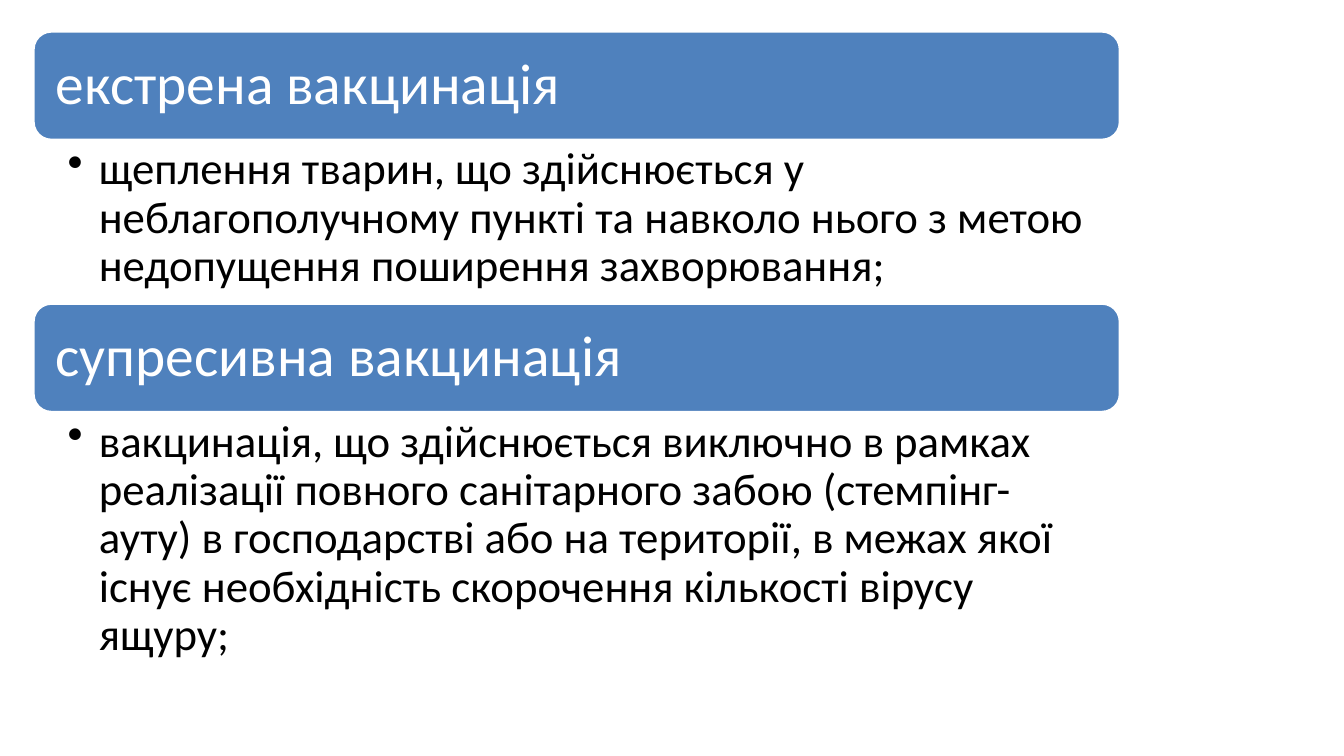
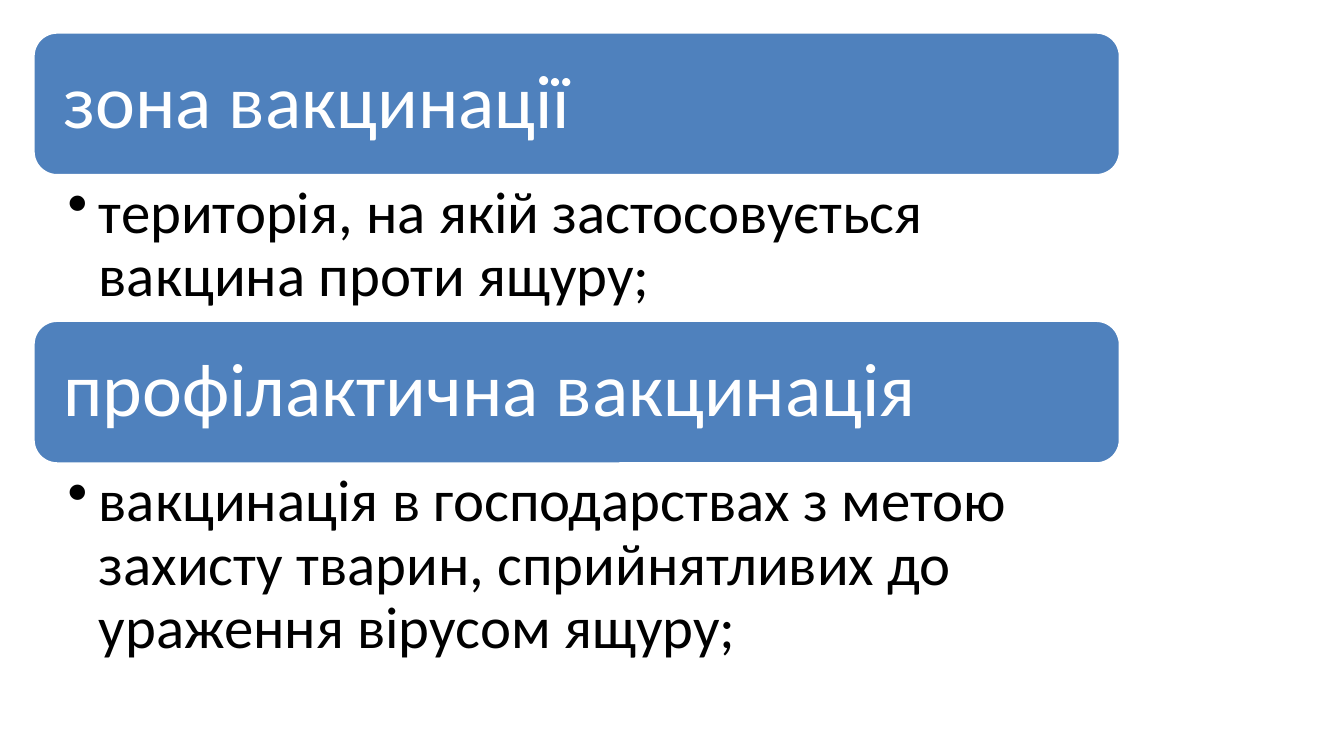
from dataclasses import dataclass

from lxml import etree
from pptx import Presentation
from pptx.dml.color import RGBColor
from pptx.enum.shapes import MSO_SHAPE
from pptx.enum.text import MSO_ANCHOR, PP_ALIGN
from pptx.oxml.ns import qn
from pptx.util import Inches, Pt

ROUNDED = MSO_SHAPE.ROUNDED_RECTANGLE
TOP, MIDDLE = MSO_ANCHOR.TOP, MSO_ANCHOR.MIDDLE
LEFT = PP_ALIGN.LEFT


@dataclass(frozen=True)
class Theme:
    font: str = "Calibri"
    band: RGBColor = RGBColor(0x4F, 0x81, 0xBD)
    white: RGBColor = RGBColor(0xFF, 0xFF, 0xFF)
    black: RGBColor = RGBColor(0, 0, 0)
    outline: float = 2
    line_spacing: float = 0.9
    bullet_indent: float = 0.31


@dataclass(frozen=True)
class Scale:
    term_size: int
    definition_size: int
    band_height: float
    band_inset: float
    definition_insets: tuple


THEME = Theme()
LIST_LEFT, LIST_WIDTH = 0.33, 10.78
COMPACT = Scale(41, 32, 1.08, 0.17, (0.34, 0.06, 0.32, 0.06))
LARGE = Scale(54, 42, 1.42, 0.23, (0.34, 0.07, 0.42, 0.07))

SLIDES = [
    (COMPACT, 0.31, [
        ("екстрена вакцинація",
         "щеплення тварин, що здійснюється у неблагополучному пункті та навколо "
         "нього з метою недопущення поширення захворювання;", 1.62),
        ("супресивна вакцинація",
         "вакцинація, що здійснюється виключно в рамках реалізації повного "
         "санітарного забою (стемпінг-ауту) в господарстві або на території, "
         "в межах якої існує необхідність скорочення кількості вірусу ящуру;", 2.6),
    ]),
    (LARGE, 0.32, [
        ("зона вакцинації",
         "територія, на якій застосовується вакцина проти ящуру;", 1.44),
        ("профілактична вакцинація",
         "вакцинація в господарствах з метою захисту тварин, сприйнятливих до "
         "ураження вірусом ящуру;", 2.08),
    ]),
]


def set_bullet(paragraph):
    properties = paragraph._p.get_or_add_pPr()
    properties.set("marL", str(Inches(THEME.bullet_indent)))
    properties.set("indent", str(-Inches(THEME.bullet_indent)))
    etree.SubElement(properties, qn("a:buChar")).set("char", "•")


def write_text(shape, text, size, color, insets, anchor, bulleted=False):
    frame = shape.text_frame
    frame.word_wrap = True
    frame.vertical_anchor = anchor
    (frame.margin_left, frame.margin_top,
     frame.margin_right, frame.margin_bottom) = map(Inches, insets)
    paragraph = frame.paragraphs[0]
    if bulleted:
        set_bullet(paragraph)
    paragraph.alignment = LEFT
    paragraph.line_spacing = THEME.line_spacing
    run = paragraph.add_run()
    run.text = text
    run.font.name = THEME.font
    run.font.size = Pt(size)
    run.font.color.rgb = color


def add_term_band(slide, box, term, scale):
    band = slide.shapes.add_shape(ROUNDED, *map(Inches, box))
    band.shadow.inherit = False
    band.fill.solid()
    band.fill.fore_color.rgb = THEME.band
    band.line.color.rgb = THEME.white
    band.line.width = Pt(THEME.outline)
    write_text(band, term, scale.term_size, THEME.white,
               (scale.band_inset,) * 4, MIDDLE)


def add_definition(slide, box, definition, scale):
    body = slide.shapes.add_textbox(*map(Inches, box))
    write_text(body, definition, scale.definition_size, THEME.black,
               scale.definition_insets, TOP, bulleted=True)


def add_glossary(slide, left, top, width, scale, entries):
    for term, definition, height in entries:
        add_term_band(slide, (left, top, width, scale.band_height), term, scale)
        top += scale.band_height
        add_definition(slide, (left, top, width, height), definition, scale)
        top += height


def main():
    deck = Presentation()
    deck.slide_width, deck.slide_height = Inches(13.33), Inches(7.5)
    blank_layout = deck.slide_layouts[6]
    for scale, top, entries in SLIDES:
        slide = deck.slides.add_slide(blank_layout)
        add_glossary(slide, LIST_LEFT, top, LIST_WIDTH, scale, entries)
    deck.save("out.pptx")


if __name__ == "__main__":
    main()
